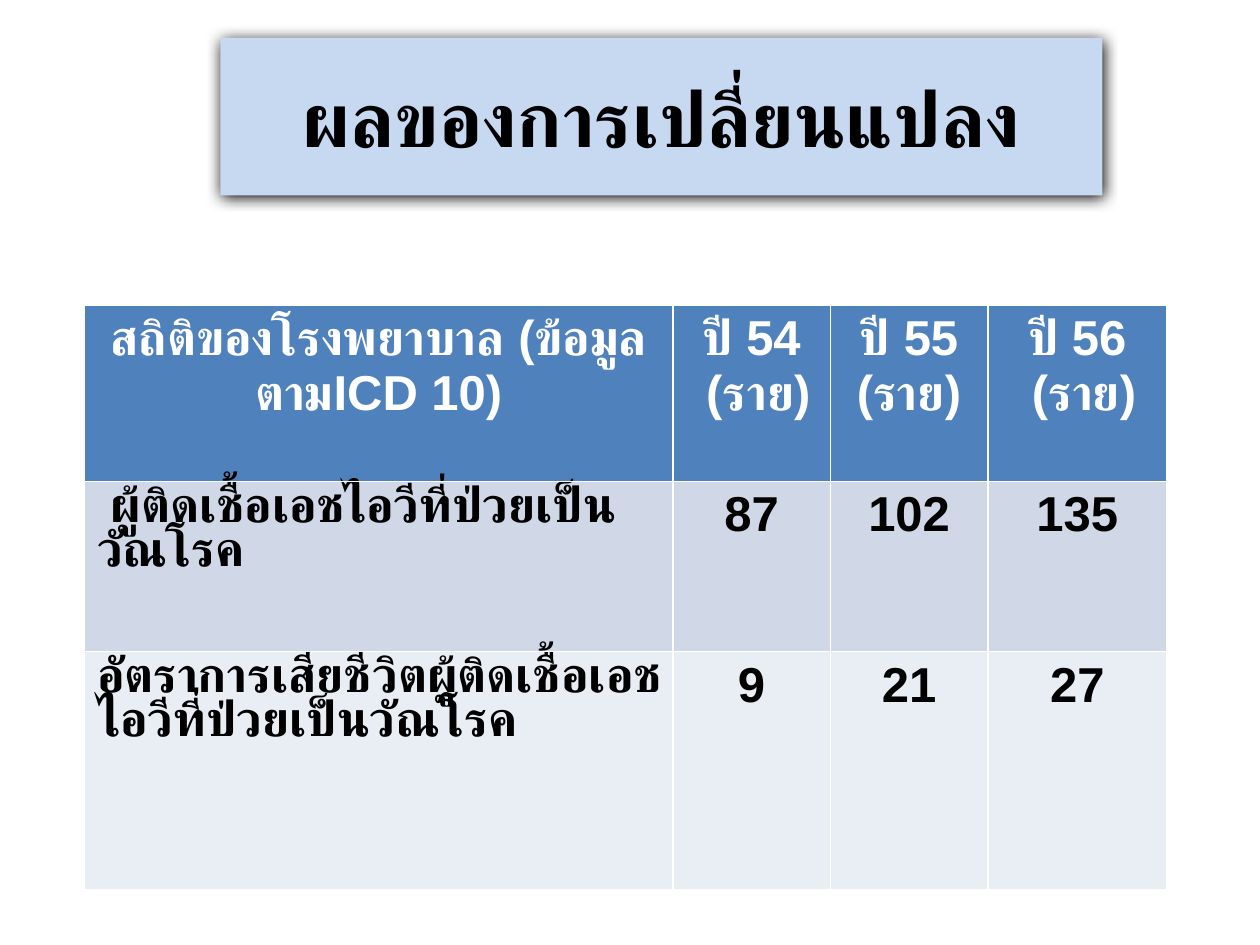
from pptx import Presentation
from pptx.dml.color import RGBColor
from pptx.enum.shapes import MSO_SHAPE
from pptx.enum.text import MSO_ANCHOR, PP_ALIGN
from pptx.oxml import parse_xml
from pptx.oxml.ns import nsdecls, qn
from pptx.util import Inches, Pt

RECT = MSO_SHAPE.RECTANGLE
MIDDLE = MSO_ANCHOR.MIDDLE
LEFT, CENTER = PP_ALIGN.LEFT, PP_ALIGN.CENTER
HEX = {"title": "C6D9F1", "head": "4F81BD", "odd": "D0D8E8",
       "even": "E9EDF4", "white": "FFFFFF", "black": "000000"}
THAI, LATIN = "Calibri", "Arial"


class Deck:
    def __init__(self):
        self.prs = Presentation()
        self.prs.slide_width = Inches(10)
        self.prs.slide_height = Inches(7.5)
        self.slide = self.prs.slides.add_slide(self.prs.slide_layouts[6])

    def color(self, name):
        return RGBColor.from_string(HEX[name])

    def text(self, frame, paras, size, ink, align=CENTER, space=None):
        for i, runs in enumerate(paras):
            para = frame.add_paragraph() if i else frame.paragraphs[0]
            para.alignment = align
            para.line_spacing = space
            for words, name in runs:
                run = para.add_run()
                run.text = words
                run.font.name = name
                run.font.size = Pt(size)
                run.font.bold = True
                run.font.color.rgb = self.color(ink)

    def title(self, words, x, y, w, h):
        box = self.slide.shapes.add_shape(
            RECT, Inches(x), Inches(y), Inches(w), Inches(h))
        box.fill.solid()
        box.fill.fore_color.rgb = self.color("title")
        box.line.fill.background()
        box.shadow.inherit = False
        shade = parse_xml(
            f'<a:outerShdw {nsdecls("a")} blurRad="{Pt(8.5)}" dist="{Pt(1)}" '
            f'dir="5400000" rotWithShape="0"><a:srgbClr val="{HEX["black"]}"/>'
            '</a:outerShdw>')
        box._element.spPr.find(qn("a:effectLst")).append(shade)
        box.text_frame.word_wrap = True
        box.text_frame.vertical_anchor = MIDDLE
        self.text(box.text_frame, [[(words, THAI)]], 44, "black")

    def border(self, cell):
        props = cell._tc.get_or_add_tcPr()
        for side in "LRTB":
            props.append(parse_xml(
                f'<a:ln{side} {nsdecls("a")} w="{Pt(1)}"><a:solidFill>'
                f'<a:srgbClr val="{HEX["white"]}"/></a:solidFill></a:ln{side}>'))

    def table(self, rows, x, y, wide, high):
        grid = self.slide.shapes.add_table(
            len(high), len(wide), Inches(x), Inches(y),
            Inches(sum(wide)), Inches(sum(high))).table
        for col, w in zip(grid.columns, wide):
            col.width = Inches(w)
        for r, (cells, fill) in enumerate(zip(rows, ("head", "odd", "even"))):
            grid.rows[r].height = Inches(high[r])
            for c, paras in enumerate(cells):
                cell = grid.cell(r, c)
                self.border(cell)
                cell.fill.solid()
                cell.fill.fore_color.rgb = self.color(fill)
                label = r > 0 and c == 0
                self.text(cell.text_frame, paras, 28,
                          "black" if r else "white",
                          LEFT if label else CENTER,
                          0.9 if label else None)


def year(num, unit):
    return [[(f"ปี {num}", LATIN)], [(unit, LATIN)]]


def data(label, *nums):
    return [[[(label, THAI)]]] + [[[(str(n), LATIN)]] for n in nums]


def main():
    deck = Deck()
    deck.title("ผลของการเปลี่ยนแปลง", 1.75, 0.3, 7, 1.25)
    head = [[[("สถิติของโรงพยาบาล ", THAI), ("(ข้อมูลตามICD 10)", LATIN)]],
            year(54, " (ราย)"), year(55, "(ราย)"), year(56, " (ราย)")]
    rows = [head,
            data(" ผู้ติดเชื้อเอชไอวีที่ป่วยเป็นวัณโรค", 87, 102, 135),
            data("อัตราการเสียชีวิตผู้ติดเชื้อเอชไอวีที่ป่วยเป็นวัณโรค", 9, 21, 27)]
    deck.table(rows, 0.67, 2.42, (4.67, 1.25, 1.25, 1.42), (1.4, 1.35, 1.89))
    deck.prs.save("out.pptx")


if __name__ == "__main__":
    main()
